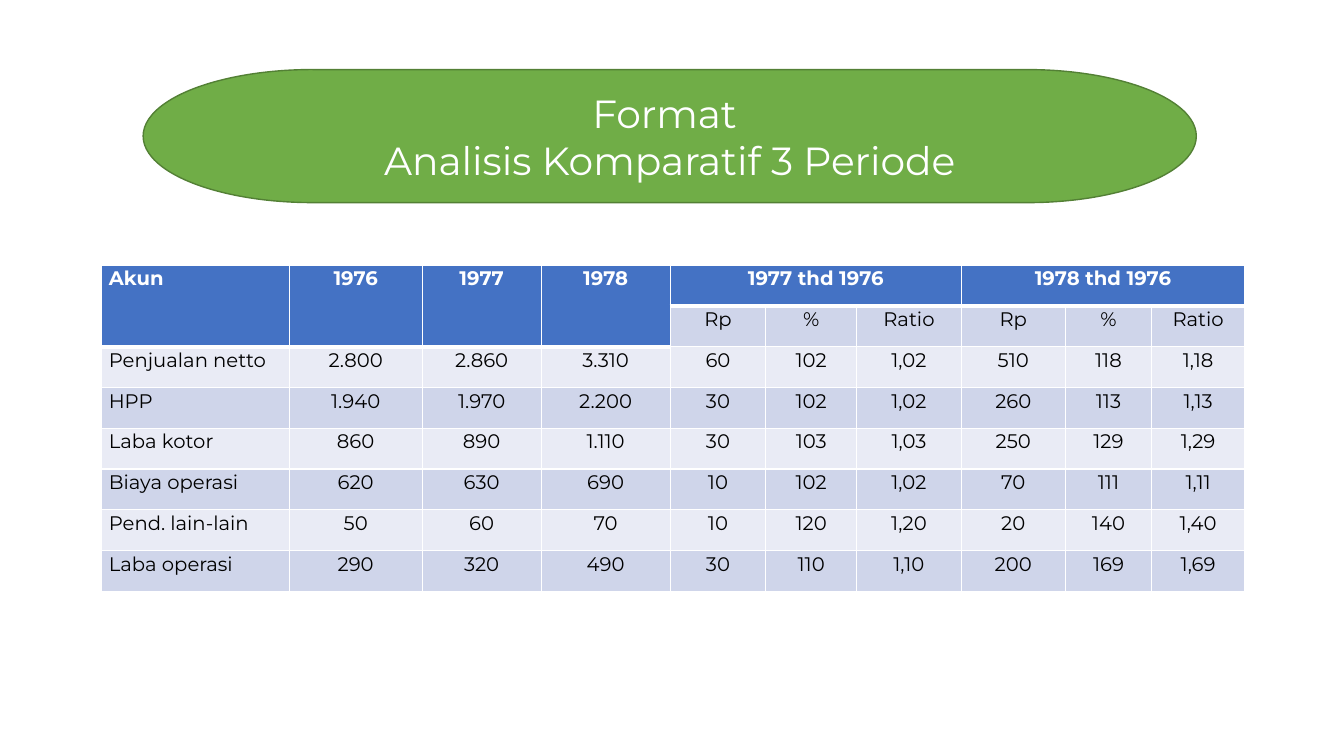
from dataclasses import dataclass

from lxml.etree import SubElement
from pptx import Presentation
from pptx.dml.color import RGBColor
from pptx.enum.shapes import MSO_SHAPE
from pptx.enum.text import MSO_ANCHOR, MSO_AUTO_SIZE, PP_ALIGN
from pptx.oxml.ns import qn
from pptx.slide import Slide
from pptx.table import Table, _Cell
from pptx.text.text import _Paragraph
from pptx.util import Emu, Pt

FONT = "Montserrat"
WHITE, BLACK = "FFFFFF", "000000"
GREEN, DARK_GREEN = "70AD47", "538035"
HEADER_BLUE, DARK_BAND, LIGHT_BAND = "4472C4", "CFD5EA", "E9EBF5"

TITLE = "Format \vAnalisis Komparatif 3 Periode"
TITLE_BOX = (284, 138, 2090, 264)
TABLE_LEFT, TABLE_TOP, ROW_HEIGHT = 202, 526, 81
COLUMN_WIDTHS = (372, 264, 236, 256, 190, 180, 208, 206, 172, 184)
CELL_MARGIN = 14


@dataclass(frozen=True)
class HeaderCell:
    label: str
    column: int
    rows: int = 1
    columns: int = 1


HEADERS = (
    HeaderCell("Akun", 0, rows=2),
    HeaderCell("1976", 1, rows=2),
    HeaderCell("1977", 2, rows=2),
    HeaderCell("1978", 3, rows=2),
    HeaderCell("1977 thd 1976", 4, columns=3),
    HeaderCell("1978 thd 1976", 7, columns=3),
)
MEASURES = ("Rp", "%", "Ratio") * 2
FIRST_MEASURE = len(COLUMN_WIDTHS) - len(MEASURES)
ACCOUNTS = (
    ("Penjualan netto", "2.800", "2.860", "3.310", "60", "102", "1,02", "510", "118", "1,18"),
    ("HPP", "1.940", "1.970", "2.200", "30", "102", "1,02", "260", "113", "1,13"),
    ("Laba kotor", "860", "890", "1.110", "30", "103", "1,03", "250", "129", "1,29"),
    ("Biaya operasi", "620", "630", "690", "10", "102", "1,02", "70", "111", "1,11"),
    ("Pend. lain-lain", "50", "60", "70", "10", "120", "1,20", "20", "140", "1,40"),
    ("Laba operasi", "290", "320", "490", "30", "110", "1,10", "200", "169", "1,69"),
)


def px(length: int) -> Emu:
    """Convert px, 200 to the inch, into EMU."""
    return Emu(length * 4572)


def rgb(colour: str) -> RGBColor:
    return RGBColor.from_string(colour)


def format_paragraph(paragraph: _Paragraph, size: int, colour: str,
                     bold: bool, align: PP_ALIGN, spacing: float) -> None:
    paragraph.alignment = align
    paragraph.line_spacing = spacing
    for run in paragraph.runs:
        run.font.name = FONT
        run.font.size = Pt(size)
        run.font.bold = bold
        run.font.color.rgb = rgb(colour)


def draw_title(slide: Slide) -> None:
    left, top, width, height = map(px, TITLE_BOX)
    banner = slide.shapes.add_shape(MSO_SHAPE.FLOWCHART_TERMINATOR, left, top, width, height)
    banner.shadow.inherit = False
    banner.fill.solid()
    banner.fill.fore_color.rgb = rgb(GREEN)
    banner.line.color.rgb = rgb(DARK_GREEN)
    banner.line.width = Pt(1)

    title = slide.shapes.title
    title.left, title.top, title.width, title.height = left, top, width, height
    # The heading goes in front of its banner.
    banner.element.addnext(title.element)
    heading = title.text_frame
    heading.text = TITLE
    heading.word_wrap = True
    heading.auto_size = MSO_AUTO_SIZE.NONE
    heading.vertical_anchor = MSO_ANCHOR.MIDDLE
    format_paragraph(heading.paragraphs[0], 28, WHITE, False, PP_ALIGN.CENTER, 1.0)


def is_header(row: int, column: int) -> bool:
    return row == 0 or (row == 1 and column < FIRST_MEASURE)


def set_borders(cell: _Cell, top: int, bottom: int) -> None:
    properties = cell._tc.get_or_add_tcPr()
    weights = {"a:lnL": 1, "a:lnR": 1, "a:lnT": top, "a:lnB": bottom}
    for position, (side, points) in enumerate(weights.items()):
        border = SubElement(properties, qn(side), w=str(Pt(points)))
        fill = SubElement(border, qn("a:solidFill"))
        SubElement(fill, qn("a:srgbClr"), val=WHITE)
        properties.insert(position, border)


def style_cell(cell: _Cell, row: int, column: int) -> None:
    header = is_header(row, column)
    below_header = row > 0 and not header and is_header(row - 1, column)
    band = DARK_BAND if row % 2 else LIGHT_BAND
    cell.margin_left = cell.margin_right = px(CELL_MARGIN)
    cell.margin_top = cell.margin_bottom = 0
    cell.vertical_anchor = MSO_ANCHOR.TOP
    cell.fill.solid()
    cell.fill.fore_color.rgb = rgb(HEADER_BLUE if header else band)
    set_borders(cell, top=3 if below_header else 1, bottom=3 if header else 1)
    format_paragraph(cell.text_frame.paragraphs[0], 14, WHITE if header else BLACK, header,
                     PP_ALIGN.CENTER if column else PP_ALIGN.LEFT, 1.07)


def fill_table(table: Table) -> None:
    for header in HEADERS:
        origin = table.cell(0, header.column)
        origin.merge(table.cell(header.rows - 1, header.column + header.columns - 1))
        origin.text = header.label
    for column, measure in enumerate(MEASURES, start=FIRST_MEASURE):
        table.cell(1, column).text = measure
    for row, account in enumerate(ACCOUNTS, start=2):
        for column, value in enumerate(account):
            table.cell(row, column).text = value


def draw_table(slide: Slide) -> None:
    row_count = 2 + len(ACCOUNTS)
    table = slide.shapes.add_table(
        row_count, len(COLUMN_WIDTHS), px(TABLE_LEFT), px(TABLE_TOP),
        px(sum(COLUMN_WIDTHS)), px(row_count * ROW_HEIGHT)).table
    table.first_row = table.horz_banding = False
    for column, width in zip(table.columns, COLUMN_WIDTHS):
        column.width = px(width)
    fill_table(table)
    for row_index, row in enumerate(table.rows):
        row.height = px(ROW_HEIGHT)
        for column_index, cell in enumerate(row.cells):
            style_cell(cell, row_index, column_index)


def main() -> None:
    presentation = Presentation()
    presentation.slide_width, presentation.slide_height = px(2667), px(1500)
    slide = presentation.slides.add_slide(presentation.slide_layouts[5])
    draw_title(slide)
    draw_table(slide)
    presentation.save("out.pptx")


if __name__ == "__main__":
    main()
